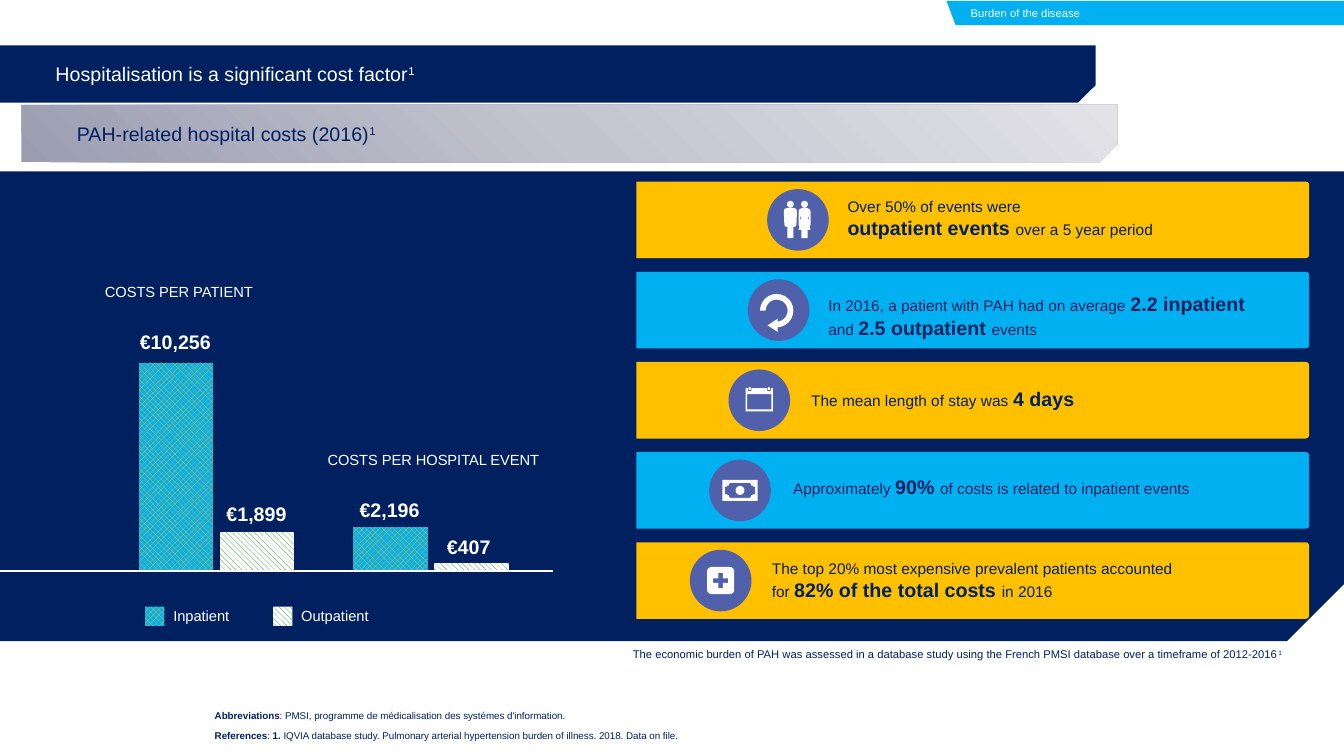
import copy
import math

import pptx
import pptx.chart.data
import pptx.dml.color
import pptx.enum.chart
import pptx.enum.dml
import pptx.enum.shapes
import pptx.enum.text
import pptx.oxml
import pptx.util
from pptx.util import Pt

KIND = pptx.enum.shapes.MSO_SHAPE
ALIGN = pptx.enum.text.PP_ALIGN
ANCHOR = pptx.enum.text.MSO_ANCHOR
PAT = pptx.enum.dml.MSO_PATTERN
COLORS = {"navy": "002060", "blue": "00B0F0", "gold": "FFC000", "violet": "5160AB",
          "green": "009900", "white": "FFFFFF",
          "dark": "9B9DB1", "mid": "C3C4CF", "light": "E2E2E7"}
BIG = {"size": 14, "bold": True}
BOLD = {"bold": True}
SUP = {"sup": True}

TAG = [["Burden of the disease"]]
TITLE = [["Hospitalisation is a significant cost factor", ("1", SUP)]]
BAND = [["PAH-related hospital costs (2016)", ("1", SUP)]]
NOTE = [["The economic burden of PAH was assessed in a database study using the French "
         "PMSI database over a timeframe of 2012-2016", ("1", SUP)]]
REFS = [
    [("Abbreviations", BOLD), ": PMSI, programme de médicalisation des systémes d'information."],
    [("References", BOLD), ": ", ("1. ", BOLD), "IQVIA database study. Pulmonary arterial "
     "hypertension burden of illness. 2018. Data on file."],
]
# text box (left, top, width, height), paragraphs
CARDS = [
    ((598.3, 137.5, 318, 37.4), [["Over 50% of events were"],
                                 [("outpatient events ", BIG), "over a 5 year period"]]),
    ((584.6, 205.2, 318, 41), [["In 2016, a patient with PAH had on average ",
                                ("2.2 inpatient ", BIG), "and ",
                                ("2.5 outpatient ", BIG), "events"]]),
    ((572.4, 272.9, 330, 24.5), [["The mean length of stay was ", ("4 days", BIG)]]),
    ((559.4, 335.5, 318, 24.5), [["Approximately ", ("90% ", BIG),
                                  "of costs is related to inpatient events"]]),
    ((544.3, 396, 332, 37.4), [["The top 20% most expensive prevalent patients accounted \n",
                                "for ", ("82% of the total costs ", BIG), "in 2016"]]),
]
# name, values, pattern fill, legend left
SERIES = [("Inpatient", (100, 21), (PAT.SOLID_DIAMOND, "gold", "blue"), 103.7),
          ("Outpatient", (19, 4), (PAT.WIDE_DOWNWARD_DIAGONAL, "green", "white"), 195.1)]
HEADS = [("COSTS PER PATIENT", (61.9, 198.4, 131.8, 20.2)),
         ("COSTS PER HOSPITAL EVENT", (207.4, 318.2, 204.5, 20.2))]
COSTS = [("€10,256", (92.9, 231.8, 64.8, 24.5)), ("€1,899", (150.5, 355, 65.5, 24.5)),
         ("€2,196", (243.4, 352.1, 69.8, 24.5)), ("€407", (309.6, 378.3, 50.4, 24.5))]

deck = pptx.Presentation()
deck.slide_width, deck.slide_height = Pt(960), Pt(540)
slide = deck.slides.add_slide(deck.slide_layouts[5])
shapes = slide.shapes


def rgb(name):
    return pptx.dml.color.RGBColor.from_string(COLORS[name])


def paint(fill, look):
    """Fill with a colour name, or with a (pattern, front, back) tuple."""
    if isinstance(look, str):
        fill.solid()
        fill.fore_color.rgb = rgb(look)
    else:
        fill.patterned()
        fill.pattern = look[0]
        fill.fore_color.rgb, fill.back_color.rgb = rgb(look[1]), rgb(look[2])


def plain(shape, look):
    paint(shape.fill, look)
    shape.line.fill.background()
    shape.shadow.inherit = False
    return shape


def add(kind, area, look, turn=0, adjust=()):
    shape = plain(shapes.add_shape(kind, *map(Pt, area)), look)
    shape.rotation = turn
    for n, value in enumerate(adjust):
        shape.adjustments[n] = value
    return shape


def draw(loops, look, dx=0, dy=0):
    """Draw closed outlines as one shape; inner outlines become holes."""
    loops = [[((x + dx) * 100, (y + dy) * 100) for x, y in loop] for loop in loops]
    pen = shapes.build_freeform(*loops[0][0], scale=127)
    for n, loop in enumerate(loops):
        if n:
            pen.move_to(*loop[0])
        pen.add_line_segments(loop[1:], close=True)
    return plain(pen.convert_to_shape(), look)


def write(box, paras, size=11, color="navy", bold=False, align=ALIGN.LEFT,
          anchor=ANCHOR.TOP, inset=(7.2, 3.6, 7.2, 3.6), after=0):
    frame = box.text_frame
    frame.word_wrap = True
    frame.auto_size = pptx.enum.text.MSO_AUTO_SIZE.NONE
    frame.vertical_anchor = anchor
    (frame.margin_left, frame.margin_top,
     frame.margin_right, frame.margin_bottom) = map(Pt, inset)
    for n, runs in enumerate(paras):
        para = frame.add_paragraph() if n else frame.paragraphs[0]
        para.alignment, para.space_after = align, Pt(after)
        for item in runs:
            text, style = (item, {}) if isinstance(item, str) else item
            run = para.add_run()
            run.text = text.rstrip("\n")
            font = run.font
            font.name, font.size = "Arial", Pt(style.get("size", size))
            font.bold = style.get("bold", bold)
            font.color.rgb = rgb(color)
            if style.get("sup"):
                run._r.get_or_add_rPr().set("baseline", "30000")
            if text.endswith("\n"):
                para.add_line_break()


def label(area, paras, **style):
    write(shapes.add_textbox(*map(Pt, area)), paras, **style)


def arc(x, y, r, start=0, end=360, steps=24):
    turns = [math.radians(start + (end - start) * n / steps) for n in range(steps + 1)]
    return [(x + r * math.cos(t), y + r * math.sin(t)) for t in turns]


def rect(x1, y1, x2, y2):
    return [(x1, y1), (x2, y1), (x2, y2), (x1, y2)]


def mirror(half, axis=0):
    """Close a left-hand outline with its reflection."""
    return half + [(2 * axis - x, y) for x, y in reversed(half)]


def banner(x, y):
    return [(x, y), (x + 782.6, y), (x + 782.6, y + 28.5), (x + 770, y + 41), (x, y + 41)]


# Panel and title
draw([[(0, 122.4), (960, 122.4), (960, 417.3), (919.4, 457.9), (0, 457.9)]], "navy")
draw([banner(0, 32.4)], "navy")
title = shapes.title
shapes._spTree.append(title._element)
title.left, title.top, title.width, title.height = map(Pt, (0, 32.4, 782.6, 41))
BAR = {"anchor": ANCHOR.MIDDLE, "inset": (39.6, 3.6, 7.2, 3.6), "size": 14}
write(title, TITLE, color="white", **BAR)

# Cost chart
data = pptx.chart.data.CategoryChartData(number_format="#,##0")
data.categories = ["1", "2"]
for name, values, look, left in SERIES:
    data.add_series(name, values)
chart = shapes.add_chart(pptx.enum.chart.XL_CHART_TYPE.COLUMN_CLUSTERED,
                         *map(Pt, (67, 214.6, 328.3, 194.4)), data).chart
chart.has_legend = chart.has_title = False
chart.font.name, chart.font.size = "Arial", Pt(10)
chart.category_axis.visible = chart.value_axis.visible = False
chart.value_axis.has_major_gridlines = False
chart.value_axis.minimum_scale, chart.value_axis.maximum_scale = 0, 117
plot = chart.plots[0]
plot.gap_width, plot.overlap, plot.vary_by_categories = 80, -9, False
for bars, (name, values, look, left) in zip(plot.series, SERIES):
    paint(bars.format.fill, look)
    bars.invert_if_negative = False
area = chart._chartSpace.chart.plotArea
for old in area.findall(pptx.oxml.ns.qn("c:layout")):
    area.remove(old)
modes = '<c:layoutTarget val="inner"/><c:xMode val="edge"/><c:yMode val="edge"/>'
sides = "".join(f'<c:{k} val="{v}"/>' for k, v in
                (("x", 0.034), ("y", 0.098), ("w", 0.933), ("h", 0.897)))
area.insert(0, pptx.oxml.parse_xml(
    f'<c:layout {pptx.oxml.ns.nsdecls("c")}><c:manualLayout>{modes}{sides}'
    '</c:manualLayout></c:layout>'))

base = shapes.add_connector(pptx.enum.shapes.MSO_CONNECTOR.STRAIGHT,
                            Pt(0), Pt(407.8), Pt(395.3), Pt(407.8))
base.line.color.rgb, base.line.width = rgb("white"), Pt(1.5)
base._element.spPr.append(pptx.oxml.parse_xml(
    f'<a:effectLst {pptx.oxml.ns.nsdecls("a")}/>'))
for text, spot in HEADS:
    label(spot, [[text]], size=10.5, color="white", align=ALIGN.CENTER, anchor=ANCHOR.MIDDLE)
for text, spot in COSTS:
    label(spot, [[text]], color="white", align=ALIGN.CENTER, inset=(0, 3.6, 0, 3.6), **BIG)
for name, values, look, left in SERIES:
    add(KIND.RECTANGLE, (left, 433.4, 13.7, 13.7), look)
    label((left + 13, 429.8, 75.6, 20.2), [[name]], size=10.5, color="white")

# Icons, measured from the centre of their disc
man = mirror([(-7.6, -8.6), (-9.6, -7.8), (-10.1, -5.8), (-9.7, 3.6), (-9, 4.8),
              (-7.6, 5), (-7.6, 13)], -5.4)
woman = mirror([(3, -8.6), (1, -7.6), (0.4, -5.8), (0.4, 3.6), (1.1, 5), (0.4, 7.2),
                (2.5, 7.2), (2.5, 13)], 4.7)
gaps = [[(x, -3.6), (y, -0.7), (x, 0)] for x, y in ((1.8, 2.5), (7.6, 6.9))]
month = mirror([(-5.6, -8.6), (-5.6, -6.5), (-8.2, -6.5), (-8.2, -8.6), (-9.7, -8.6),
                (-9.7, 8)])
note = mirror([(-7.2, -5.4), (-8.2, -3.4), (-10.8, -2.4), (-10.8, 2.4), (-8.2, 3.4),
               (-7.2, 5.4)])
cross = mirror([(-1.6, -5.4), (-1.6, -1.6), (-5.4, -1.6), (-5.4, 1.6), (-1.6, 1.6),
                (-1.6, 5.4)])
tile = mirror(arc(-6.5, -6.5, 3.2, 270, 180, 6) + arc(-6.5, 6.5, 3.2, 180, 90, 6))
ICONS = [
    [[arc(-5.4, -11.2, 2.4), man], [arc(4.7, -11.2, 2.4), woman, *gaps]],
    [],
    [[month, rect(-8.6, -4.3, 8.6, 6.6), rect(-7.6, -9.4, -6.1, -7.2),
      rect(6.1, -9.4, 7.6, -7.2)]],
    [[rect(-12.6, -7.5, 12.6, 7.5), note, arc(0, 0, 3.2)]],
    [[tile, cross]],
]

# Fact cards
for n, ((spot, paras), icon) in enumerate(zip(CARDS, ICONS)):
    x, y = 570 - 13.8 * n, 157.1 + 64.4 * n
    add(KIND.ROUND_2_SAME_RECTANGLE, (694.8 - 27.35, y - 240.3, 54.7, 480.6),
        ("gold", "blue")[n % 2], turn=90, adjust=(0.045, 0))
    add(KIND.OVAL, (x - 22, y - 22, 44, 44), "violet")
    for loops in icon:
        draw(loops, "white", x, y)
    if n == 1:
        add(KIND.BLOCK_ARC, (x - 13.3, y - 11.5, 23.8, 23.8), "white",
            adjust=(108, 56.37, 0.17))
        add(KIND.ISOSCELES_TRIANGLE, (x - 9, y + 7.3, 9.4, 7.2), "white", turn=270)
    label(spot, paras)

# Header tag, band and notes
tag = draw([[(676.1, 0.7), (960, 0.7), (960, 18), (682.6, 18)]], "blue")
write(tag, TAG, size=8, color="white", anchor=ANCHOR.MIDDLE, inset=(17.3, 3.6, 7.2, 3.6))
band = draw([banner(15.3, 75)], "light")
band.fill.gradient()
band.fill.gradient_angle = 45
first = band.fill.gradient_stops[0]._gs
first.addnext(copy.deepcopy(first))
for stop, spot, name in zip(band.fill.gradient_stops, (0, 0.5, 1), ("dark", "mid", "light")):
    stop.position, stop.color.rgb = spot, rgb(name)
write(band, BAND, **BAR)
label((445, 459, 486.7, 17.3), NOTE, size=8)
label((153.4, 501.8, 563.8, 28.1), REFS, size=7, anchor=ANCHOR.BOTTOM,
      inset=(0, 0, 0, 0), after=6)
deck.save("out.pptx")
